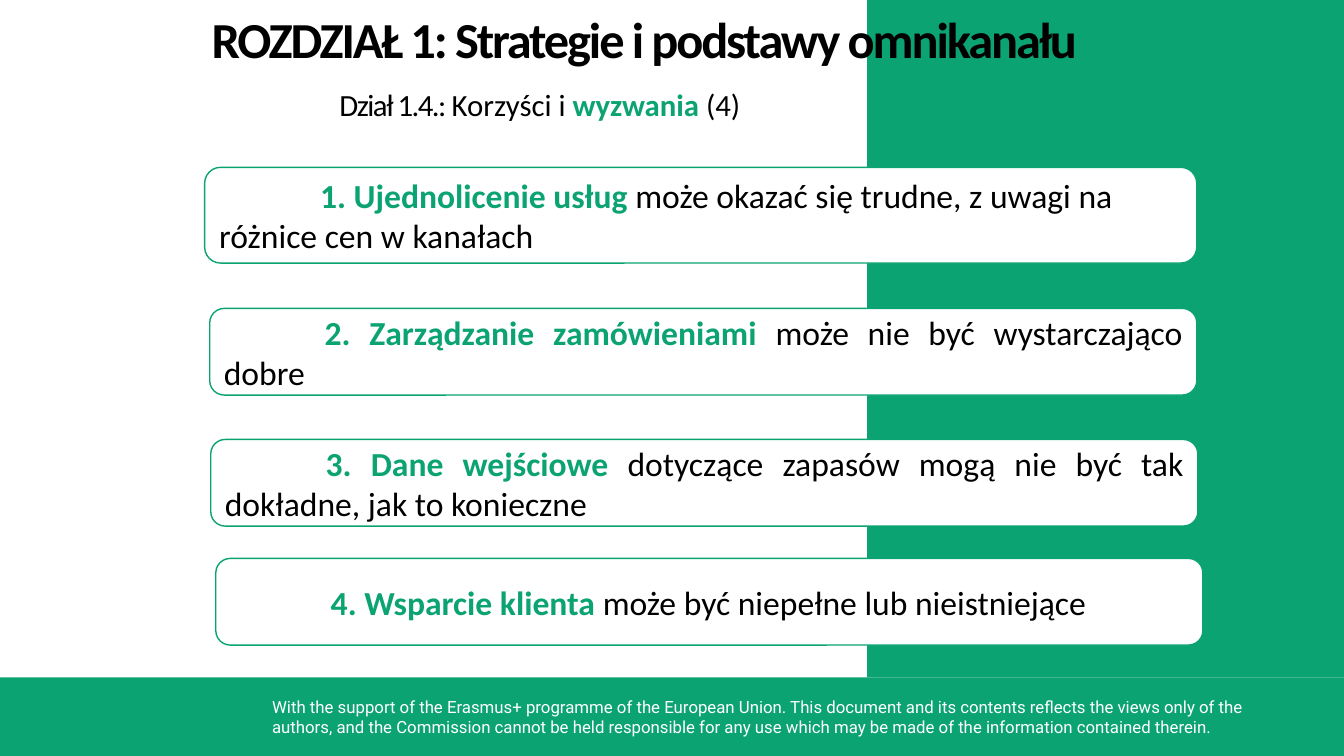
from lxml import etree
from pptx import Presentation
from pptx import util as u
from pptx.dml.color import RGBColor
from pptx.enum import shapes, text
from pptx.oxml.ns import qn

COLORS = {"green": "0CA373", "white": "FFFFFF", "black": "000000"}
WIDTH, HEIGHT = 13.33, 7.5
FOOTER_TOP = 6.72
PANEL_LEFT = 8.6

presentation = Presentation()
presentation.slide_width = u.Inches(WIDTH)
presentation.slide_height = u.Inches(HEIGHT)
slide = presentation.slides.add_slide(presentation.slide_layouts[5])


def add_box(kind, box, fill, line=None):
    shape = slide.shapes.add_shape(kind, *map(u.Inches, box))
    shape.shadow.inherit = False
    shape.fill.solid()
    shape.fill.fore_color.rgb = RGBColor.from_string(COLORS[fill])
    if line:
        shape.line.color.rgb = RGBColor.from_string(COLORS[line])
        shape.line.width = u.Pt(1)
    else:
        shape.line.fill.background()
    return shape


def add_run(paragraph, words, size, color="black", bold=False, font="Calibri", spacing=0):
    """Append a formatted run; spacing is the letter spacing in points."""
    run = paragraph.add_run()
    run.text = words
    run.font.name = font
    run.font.size = u.Pt(size)
    run.font.bold = bold
    run.font.color.rgb = RGBColor.from_string(COLORS[color])
    if spacing:
        run.font._element.set("spc", str(round(spacing * 100)))


# Green footer and side panel
add_box(shapes.MSO_SHAPE.RECTANGLE, (0, FOOTER_TOP, WIDTH, HEIGHT - FOOTER_TOP), "green")
footer = slide.shapes.add_textbox(*map(u.Inches, (2.6, 6.86, 10.42, 0.5)))
footer.text_frame.word_wrap = True
add_run(
    footer.text_frame.paragraphs[0],
    "With the support of the Erasmus+ programme of the European Union. "
    "This document and its contents reflects the views only of the authors, "
    "and the Commission cannot be held responsible for any use which may be "
    "made of the information contained therein.",
    12, "white", font="Roboto",
)
add_box(shapes.MSO_SHAPE.RECTANGLE, (PANEL_LEFT, 0, WIDTH - PANEL_LEFT, FOOTER_TOP), "green")

# Title, raised above the panel
title = slide.shapes.title
title._element.getparent().append(title._element)
title.left, title.top, title.width, title.height = map(u.Inches, (2.1, 0.14, 9.51, 0.56))

subtitle = slide.shapes.add_textbox(*map(u.Inches, (1.56, 0.83, 7.59, 0.39)))

for heading, inset in ((title, 0.01), (subtitle, 0.02)):
    frame = heading.text_frame
    frame.word_wrap = True
    frame.auto_size = text.MSO_AUTO_SIZE.SHAPE_TO_FIT_TEXT
    frame.vertical_anchor = text.MSO_ANCHOR.TOP
    frame.margin_left = frame.margin_right = frame.margin_bottom = 0
    frame.margin_top = u.Inches(inset)

title_paragraph = title.text_frame.paragraphs[0]
title_paragraph.alignment = text.PP_ALIGN.LEFT
title_paragraph.line_spacing = 0.9
add_run(title_paragraph, "ROZDZIAŁ 1: Strategie i podstawy omnikanału", 36, bold=True, spacing=-1.5)

subtitle_paragraph = subtitle.text_frame.paragraphs[0]
subtitle_paragraph.alignment = text.PP_ALIGN.CENTER
add_run(subtitle_paragraph, "Dział 1.4.: ", 22, spacing=-1.1)
add_run(subtitle_paragraph, "Korzyści i ", 22)
add_run(subtitle_paragraph, "wyzwania", 22, "green", bold=True)
add_run(subtitle_paragraph, " (4)", 22)

# Numbered challenges: box, alignment, key words, rest of the sentence
LEFT, JUSTIFY = text.PP_ALIGN.LEFT, text.PP_ALIGN.JUSTIFY
challenges = [
    ((2.03, 1.66, 9.84, 0.95), LEFT, "Ujednolicenie usług",
     "może okazać się trudne, z uwagi na różnice cen w kanałach"),
    ((2.08, 3.06, 9.79, 0.86), JUSTIFY, "Zarządzanie zamówieniami",
     "może nie być wystarczająco dobre"),
    ((2.09, 4.36, 9.79, 0.86), JUSTIFY, "Dane wejściowe",
     "dotyczące zapasów mogą nie być tak dokładne, jak to konieczne"),
    ((2.14, 5.54, 9.79, 0.86), JUSTIFY, "Wsparcie klienta",
     "może być niepełne lub nieistniejące"),
]
for number, (box, alignment, key_words, rest) in enumerate(challenges, 1):
    card = add_box(shapes.MSO_SHAPE.ROUNDED_RECTANGLE, box, "white", "green")
    card.text_frame.word_wrap = True
    card.text_frame.vertical_anchor = text.MSO_ANCHOR.MIDDLE
    paragraph = card.text_frame.paragraphs[0]
    paragraph.alignment = alignment
    tab_stops = etree.SubElement(paragraph._p.get_or_add_pPr(), qn("a:tabLst"))
    etree.SubElement(tab_stops, qn("a:tab"), pos=str(u.Inches(1)), algn="l")
    add_run(paragraph, f"\t{number}. {key_words} ", 24, "green", bold=True)
    add_run(paragraph, rest, 24)

presentation.save("out.pptx")
